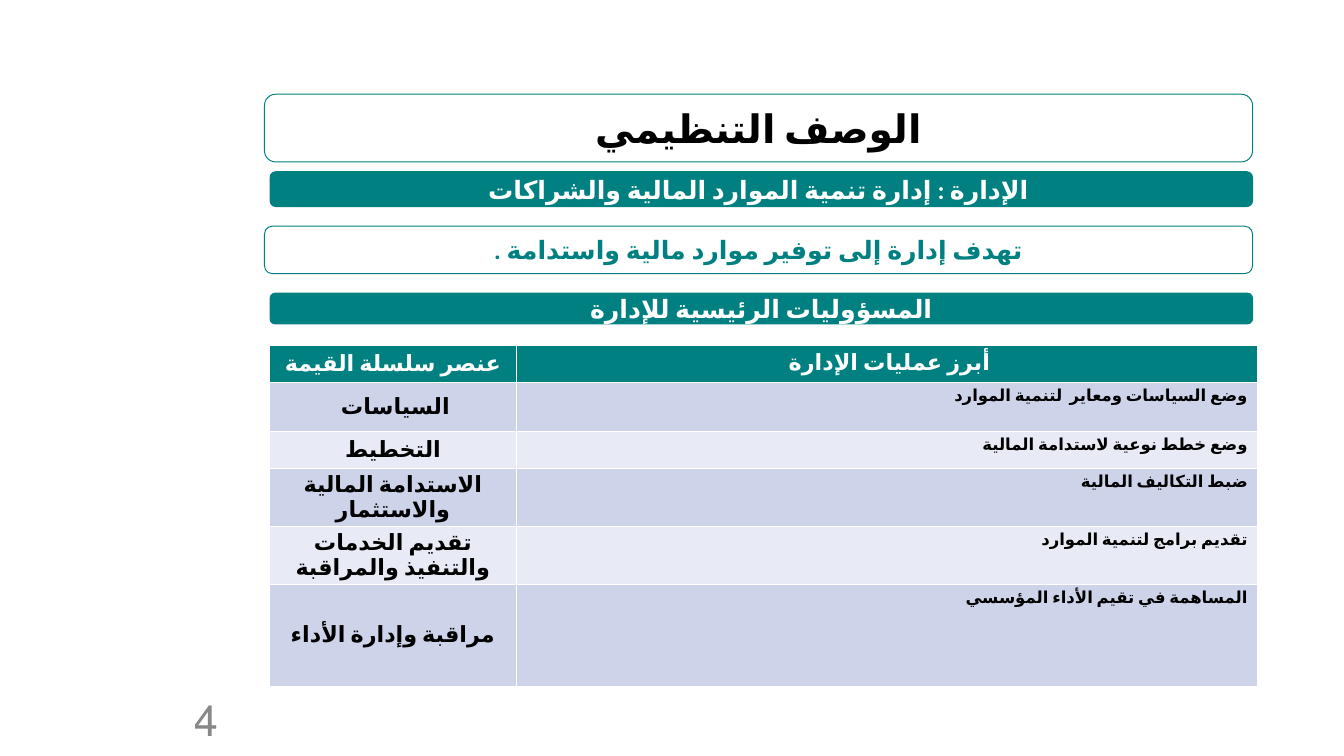
from dataclasses import dataclass

from lxml import etree
from pptx import Presentation
from pptx.dml.color import RGBColor
from pptx.enum.shapes import MSO_SHAPE
from pptx.enum.text import MSO_ANCHOR, PP_ALIGN
from pptx.oxml.ns import qn
from pptx.slide import Slide
from pptx.text.text import TextFrame
from pptx.util import Inches, Pt

ROUND = MSO_SHAPE.ROUNDED_RECTANGLE
TOP, MIDDLE = MSO_ANCHOR.TOP, MSO_ANCHOR.MIDDLE
LEFT, CENTER, RIGHT = PP_ALIGN.LEFT, PP_ALIGN.CENTER, PP_ALIGN.RIGHT

TEAL = RGBColor(0x00, 0x80, 0x80)
WHITE = RGBColor(0xFF, 0xFF, 0xFF)
BLACK = RGBColor(0x00, 0x00, 0x00)
GRAY = RGBColor(0x88, 0x88, 0x88)
BANDS = (RGBColor(0xCD, 0xD4, 0xEA), RGBColor(0xE8, 0xEB, 0xF5))

FONT = "Calibri"
PAD_X, PAD_Y = Inches(0.14), Inches(0.07)
EDGE = 17.95


@dataclass
class Bar:
    text: str
    left: float
    top: float
    height: float
    size: float
    fill: RGBColor
    ink: RGBColor


@dataclass
class Row:
    height: float
    link: str
    task: str


BARS = [
    Bar("الوصف التنظيمي", 3.79, 1.35, 0.97, 40.4, WHITE, BLACK),
    Bar(" الإدارة : إدارة تنمية الموارد المالية والشراكات", 3.87, 2.46, 0.5, 26, TEAL, WHITE),
    Bar("تهدف إدارة إلى توفير موارد مالية واستدامة .", 3.79, 3.24, 0.68, 26, WHITE, TEAL),
    Bar("المسؤوليات الرئيسية للإدارة", 3.87, 4.2, 0.44, 26, TEAL, WHITE),
]

ROWS = [
    Row(0.53, "عنصر سلسلة القيمة", "أبرز عمليات الإدارة "),
    Row(0.7, "السياسات ", "وضع السياسات ومعاير  لتنمية الموارد "),
    Row(0.53, "التخطيط", "وضع خطط نوعية لاستدامة المالية "),
    Row(0.7, "الاستدامة المالية والاستثمار", "ضبط التكاليف المالية"),
    Row(0.83, "تقديم الخدمات والتنفيذ والمراقبة", "تقديم برامج لتنمية الموارد"),
    Row(1.47, "مراقبة وإدارة الأداء", "المساهمة في تقيم الأداء المؤسسي"),
]
COLS = (3.54, 10.62)


def write(frame: TextFrame, text: str, size: float, ink: RGBColor,
          align: PP_ALIGN = CENTER) -> None:
    frame.text = text
    frame.word_wrap = True
    para = frame.paragraphs[0]
    para.alignment = align
    para._p.get_or_add_pPr().set("rtl", "1")
    font = para.runs[0].font
    font.name, font.size = FONT, Pt(size)
    font.color.rgb = ink


def embolden(frame: TextFrame) -> None:
    run = frame.paragraphs[0].runs[0]
    run.font.bold = True
    props = run._r.get_or_add_rPr()
    props.set("lang", "ar-SA")
    etree.SubElement(props, qn("a:cs")).set("typeface", FONT)


def pad(item) -> None:
    item.margin_left = item.margin_right = PAD_X
    item.margin_top = item.margin_bottom = PAD_Y


def add_bar(slide: Slide, bar: Bar) -> None:
    shape = slide.shapes.add_shape(
        ROUND, Inches(bar.left), Inches(bar.top),
        Inches(EDGE - bar.left), Inches(bar.height))
    shape.shadow.inherit = False
    shape.fill.solid()
    shape.fill.fore_color.rgb = bar.fill
    shape.line.color.rgb = TEAL
    shape.line.width = Pt(1)
    frame = shape.text_frame
    pad(frame)
    frame.vertical_anchor = MIDDLE
    write(frame, bar.text, bar.size, bar.ink)
    embolden(frame)


def add_grid(slide: Slide) -> None:
    high = sum(row.height for row in ROWS)
    table = slide.shapes.add_table(
        len(ROWS), len(COLS), Inches(3.86), Inches(4.95),
        Inches(sum(COLS)), Inches(high)).table
    for col, width in zip(table.columns, COLS):
        col.width = Inches(width)
    for r, row in enumerate(ROWS):
        table.rows[r].height = Inches(row.height)
        for c, text in enumerate((row.link, row.task)):
            cell = table.cell(r, c)
            body = r > 0 and c == 1
            pad(cell)
            cell.vertical_anchor = TOP if c else MIDDLE
            cell.fill.solid()
            cell.fill.fore_color.rgb = BANDS[(r - 1) % 2] if r else TEAL
            write(cell.text_frame, text, 17 if body else 23,
                  BLACK if r else WHITE, RIGHT if body else CENTER)
            embolden(cell.text_frame)
            cell.text_frame.paragraphs[0].line_spacing = 0.9


def add_page(slide: Slide) -> None:
    frame = slide.shapes.add_textbox(
        Inches(2.64), Inches(10.02), Inches(4.33), Inches(0.58)).text_frame
    pad(frame)
    frame.vertical_anchor = MIDDLE
    write(frame, "4", 44.5, GRAY, LEFT)


def main() -> None:
    deck = Presentation()
    deck.slide_width, deck.slide_height = Inches(19.26), Inches(10.83)
    slide = deck.slides.add_slide(deck.slide_layouts[6])
    add_page(slide)
    for bar in BARS:
        add_bar(slide, bar)
    add_grid(slide)
    deck.save("out.pptx")


if __name__ == "__main__":
    main()
